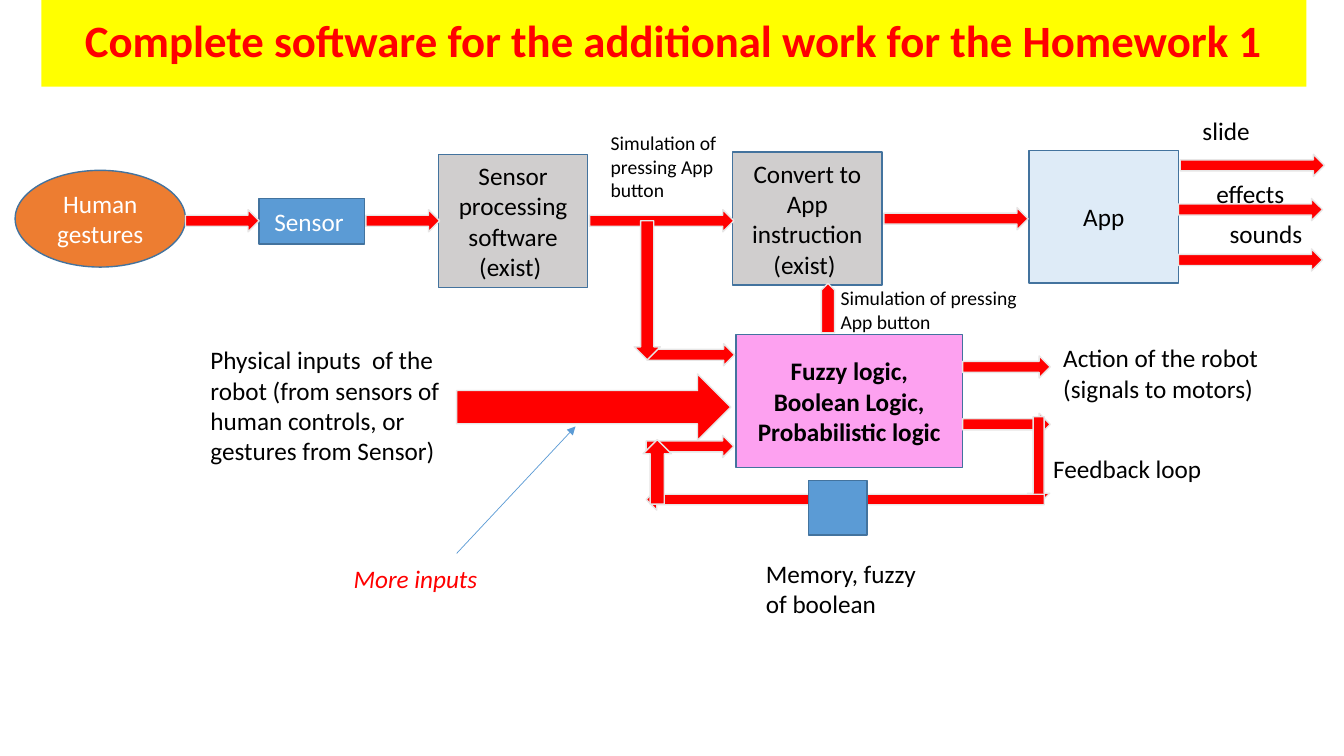
from pptx import Presentation
from pptx.util import Pt
from pptx.dml.color import RGBColor
from pptx.enum.shapes import MSO_CONNECTOR, MSO_SHAPE
from pptx.enum.text import MSO_ANCHOR, PP_ALIGN
from pptx.oxml.ns import qn
from lxml.etree import SubElement

HUES = {
    "yellow": "FFFF00", "red": "FF0000", "black": "000000", "white": "FFFFFF",
    "gray": "D0CECE", "pale": "E7E6E6", "blue": "5B9BD5", "navy": "43739E",
    "orange": "ED7D31", "sky": "DEEBF7", "pink": "FDA1F0",
}


def write(shape, text, size, hue, align, bold=False, slant=False):
    frame = shape.text_frame
    frame.word_wrap = True
    frame.text = text
    for para in frame.paragraphs:
        para.alignment = align
        font = para.font
        font.name, font.size = "Calibri", Pt(size)
        font.bold, font.italic = bold, slant
        font.color.rgb = RGBColor.from_string(HUES[hue])


def draw(kind, place, fill, edge):
    shape = slide.shapes.add_shape(kind, *map(Pt, place))
    shape.shadow.inherit = False
    shape.fill.solid()
    shape.fill.fore_color.rgb = RGBColor.from_string(HUES[fill])
    shape.line.color.rgb = RGBColor.from_string(HUES[edge])
    shape.line.width = Pt(1)
    return shape


deck = Presentation()
deck.slide_width, deck.slide_height = Pt(960), Pt(540)
slide = deck.slides.add_slide(deck.slide_layouts[5])

# Title
title = slide.shapes.title
title.left, title.top, title.width, title.height = map(Pt, (29.5, 0, 903.6, 61.9))
title.fill.solid()
title.fill.fore_color.rgb = RGBColor.from_string(HUES["yellow"])
write(title, "Complete software for the additional work for the Homework 1",
      32, "red", PP_ALIGN.CENTER, bold=True)
title.text_frame.vertical_anchor = MSO_ANCHOR.MIDDLE
title.text_frame.paragraphs[0].line_spacing = 0.9

# Stages
RECT, OVAL = MSO_SHAPE.RECTANGLE, MSO_SHAPE.OVAL
stages = [
    (OVAL, (10.8, 121.7, 121.7, 69.1), "orange", "white", "Human gestures"),
    (RECT, (185, 141.8, 75.6, 32.4), "blue", "white", "Sensor "),
    (RECT, (313.2, 110.2, 106.6, 95), "gray", "black",
     "Sensor processing software (exist) "),
    (RECT, (523.4, 108.7, 106.6, 95), "gray", "black",
     "Convert to App instruction (exist) "),
    (RECT, (735.1, 107.3, 106.6, 95), "sky", "black", "App"),
    (RECT, (525.6, 239, 162, 95), "pink", "black",
     "Fuzzy logic,\nBoolean Logic,\nProbabilistic logic"),
]
for kind, place, fill, hue, text in stages:
    box = draw(kind, place, fill, "navy")
    write(box, text, 18, hue, PP_ALIGN.CENTER, bold=fill == "pink")
    box.text_frame.vertical_anchor = MSO_ANCHOR.MIDDLE

# Block arrows: left, top, width, height, turn
THIN, SHORT, LONG = 15.8, 62.6, 103
arrows = [
    (132.5, 149.8, 52.6, THIN, 0),
    (261.4, 149.8, 52.6, THIN, 0),
    (421.2, 149.8, LONG, THIN, 0),
    (631.4, 148.3, LONG, THIN, 0),
    (843.1, 110.2, LONG, THIN, 0),
    (841.7, 141.8, LONG, THIN, 0),
    (841.7, 177.8, LONG, THIN, 0),
    (462.2, 245.5, SHORT, THIN, 0),
    (687.6, 254.2, SHORT, THIN, 0),
    (687.6, 295.2, SHORT, THIN, 0),
    (461.5, 311, SHORT, THIN, 0),
    (710.6, 321.1, SHORT, THIN, 90),
    (461.5, 349.2, 284.4, 15.1, 180),
    (446.4, 326.9, 46.1, 20.2, 270),
    (326.2, 267.1, 195.8, 47.5, 0),
    (412.6, 198, 99.4, 18.7, 90),
    (573.8, 215.3, 35.3, 9.4, 270),
]
for *place, turn in arrows:
    arrow = draw(MSO_SHAPE.RIGHT_ARROW, place, "red", "pale")
    arrow.rotation = turn
arrow.adjustments[0] = 1  # full-width shaft on the last one

# Memory block on the feedback loop
draw(RECT, (577.4, 343.4, 41.8, 38.9), "blue", "navy")

# Labels
labels = [
    (429.1, 90, 110.9, 58.3, 14, "Simulation of pressing App button"),
    (593.3, 200.9, 152.6, 41, 14, "Simulation of pressing App button"),
    (851.8, 78.5, 64.1, 28.8, 18, "slide"),
    (861.8, 123.8, 64.1, 28.8, 18, "effects"),
    (871.2, 152.6, 73.4, 28.8, 18, "sounds"),
    (745.2, 320.4, 146.2, 28.8, 18, "Feedback loop"),
    (540, 395.3, 126.7, 51.1, 18, "Memory, fuzzy of boolean"),
    (752.4, 241.2, 199.4, 51.1, 18, "Action of the robot (signals to motors)"),
    (143.3, 242.6, 199.4, 94.3, 18,
     "Physical inputs  of the robot (from sensors of human controls, "
     "or gestures from Sensor)"),
    (245.5, 398.9, 149.8, 28.8, 18, "More inputs"),
]
for *place, size, text in labels:
    more = text == "More inputs"
    label = slide.shapes.add_textbox(*map(Pt, place))
    write(label, text, size, "red" if more else "black", PP_ALIGN.LEFT, slant=more)

# Pointer from "More inputs" to the wide arrow
link = slide.shapes.add_connector(
    MSO_CONNECTOR.STRAIGHT, Pt(326.2), Pt(395.3), Pt(411.1), Pt(304.6))
link.line.color.rgb = RGBColor.from_string(HUES["blue"])
link.line.width = Pt(0.5)
SubElement(link.line._get_or_add_ln(), qn("a:tailEnd"), type="triangle")
SubElement(link._element.spPr, qn("a:effectLst"))

deck.save("out.pptx")
